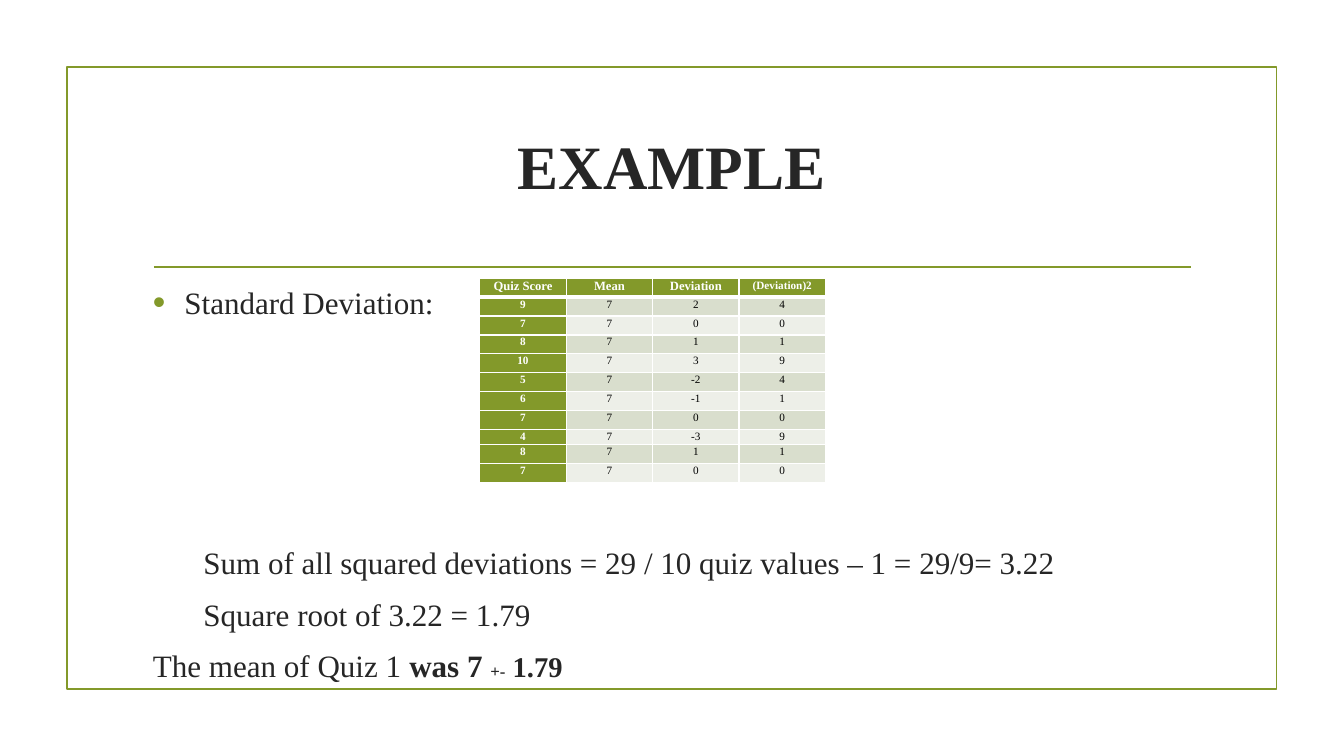
"""Build the standard deviation example slide."""
from lxml.etree import SubElement
from pptx import Presentation
from pptx.dml.color import RGBColor
from pptx.enum.shapes import MSO_CONNECTOR, MSO_SHAPE
from pptx.enum.text import MSO_ANCHOR, PP_ALIGN
from pptx.oxml.ns import qn
from pptx.util import Pt

GREEN = RGBColor(0x83, 0x99, 0x2A)
DARK = RGBColor(0x26, 0x26, 0x26)
BLACK = RGBColor(0, 0, 0)
WHITE = RGBColor(0xFF, 0xFF, 0xFF)
BANDS = RGBColor(0xD9, 0xDE, 0xCD), RGBColor(0xED, 0xEF, 0xE8)
FACE = "Times New Roman"

TITLE = "EXAMPLE"
HEADS = ["Quiz Score", "Mean", "Deviation", "(Deviation)2"]
SCORES = [9, 7, 8, 10, 5, 6, 7, 4, 8, 7]
MEAN = 7
SHORT = 8
TOP = Pt(198.8)
BODY = {"size": Pt(22.2), "bold": False}
BOLD = {"size": Pt(22.2), "bold": True}
LINES = [
    (22.5, -22.5, 0, [("Standard Deviation:", BODY)]),
    (36, 0, 153.5, [("Sum of all squared deviations = 29 / 10 quiz values – 1 = 29/9= 3.22", BODY)]),
    (36, 0, 4, [("Square root of 3.22 = 1.79", BODY)]),
    (0, 0, 4, [("The mean of Quiz 1 ", BODY), ("was 7 ", BOLD),
               ("+-", {"size": Pt(12), "bold": True}),
               (" 1.79", {"size": Pt(20.4), "bold": True})]),
]


def style(item, form):
    for key, value in form.items():
        setattr(item, key, value)


def write(para, text, tint, form):
    run = para.add_run()
    run.text = text
    style(run.font, {"name": FACE, **form})
    run.font.color.rgb = tint


def edge(item):
    item.line.color.rgb = GREEN
    item.line.width = Pt(1.25)


def bullet(para):
    props = para._p.get_or_add_pPr()
    tint = SubElement(props, qn("a:buClr"))
    SubElement(tint, qn("a:srgbClr"), val=str(GREEN))
    SubElement(props, qn("a:buSzPct"), val="115000")
    SubElement(props, qn("a:buFont"), typeface="Arial")
    SubElement(props, qn("a:buChar"), char="•")


def border(cell, head):
    props = cell._tc.get_or_add_tcPr()
    for side in "LRTB":
        width = Pt(3 if head and side == "B" else 1)
        line = SubElement(props, qn(f"a:ln{side}"), w=str(width))
        fill = SubElement(line, qn("a:solidFill"))
        SubElement(fill, qn("a:srgbClr"), val=str(WHITE))


def add_frame(slide):
    frame = slide.shapes.add_shape(MSO_SHAPE.RECTANGLE, Pt(47.8), Pt(48), Pt(864), Pt(444.2))
    frame.shadow.inherit = False
    frame.fill.background()
    edge(frame)
    rule = slide.shapes.add_connector(MSO_CONNECTOR.STRAIGHT, Pt(110), Pt(190.8), Pt(850.5), Pt(190.8))
    SubElement(rule._element.spPr, qn("a:effectLst"))
    edge(rule)


def add_title(slide):
    title = slide.shapes.title
    style(title, {"left": Pt(102), "top": Pt(77.5), "width": Pt(756), "height": Pt(80.6)})
    title.text_frame.vertical_anchor = MSO_ANCHOR.MIDDLE
    para = title.text_frame.paragraphs[0]
    para.alignment = PP_ALIGN.CENTER
    write(para, TITLE, DARK, {"size": Pt(44), "bold": True})


def add_body(slide):
    frame = slide.shapes.add_textbox(Pt(102.2), TOP, Pt(756), Pt(290)).text_frame
    frame.word_wrap = True
    for num, (left, hang, gap, runs) in enumerate(LINES):
        para = frame.add_paragraph() if num else frame.paragraphs[0]
        props = para._p.get_or_add_pPr()
        props.set("marL", str(Pt(left)))
        props.set("indent", str(Pt(hang)))
        if hang:
            bullet(para)
        style(para, {"space_before": Pt(gap), "space_after": Pt(6)})
        for text, form in runs:
            write(para, text, DARK, form)


def add_scores(slide):
    rows = [HEADS] + [[n, MEAN, n - MEAN, (n - MEAN) ** 2] for n in SCORES]
    table = slide.shapes.add_table(len(rows), len(HEADS), Pt(342.7), TOP, Pt(247), Pt(146)).table
    for col in table.columns:
        col.width = Pt(61.75)
    for y, row in enumerate(rows):
        table.rows[y].height = Pt(11 if y == SHORT else 13.5)
        for x, value in enumerate(row):
            cell = table.cell(y, x)
            key = y == 0 or x == 0
            style(cell, {"margin_left": Pt(5), "margin_right": Pt(5), "margin_top": 0, "margin_bottom": 0})
            border(cell, y == 0)
            cell.fill.solid()
            cell.fill.fore_color.rgb = GREEN if key else BANDS[(y - 1) % 2]
            para = cell.text_frame.paragraphs[0]
            style(para, {"alignment": PP_ALIGN.CENTER, "line_spacing": 1.07})
            size = Pt(9 if y == 0 and x < 3 else 8)
            write(para, str(value), WHITE if key else BLACK, {"size": size, "bold": key})


def main():
    deck = Presentation()
    style(deck, {"slide_width": Pt(960), "slide_height": Pt(540)})
    slide = deck.slides.add_slide(deck.slide_layouts[5])
    for add in (add_frame, add_title, add_body, add_scores):
        add(slide)
    deck.save("out.pptx")


if __name__ == "__main__":
    main()
